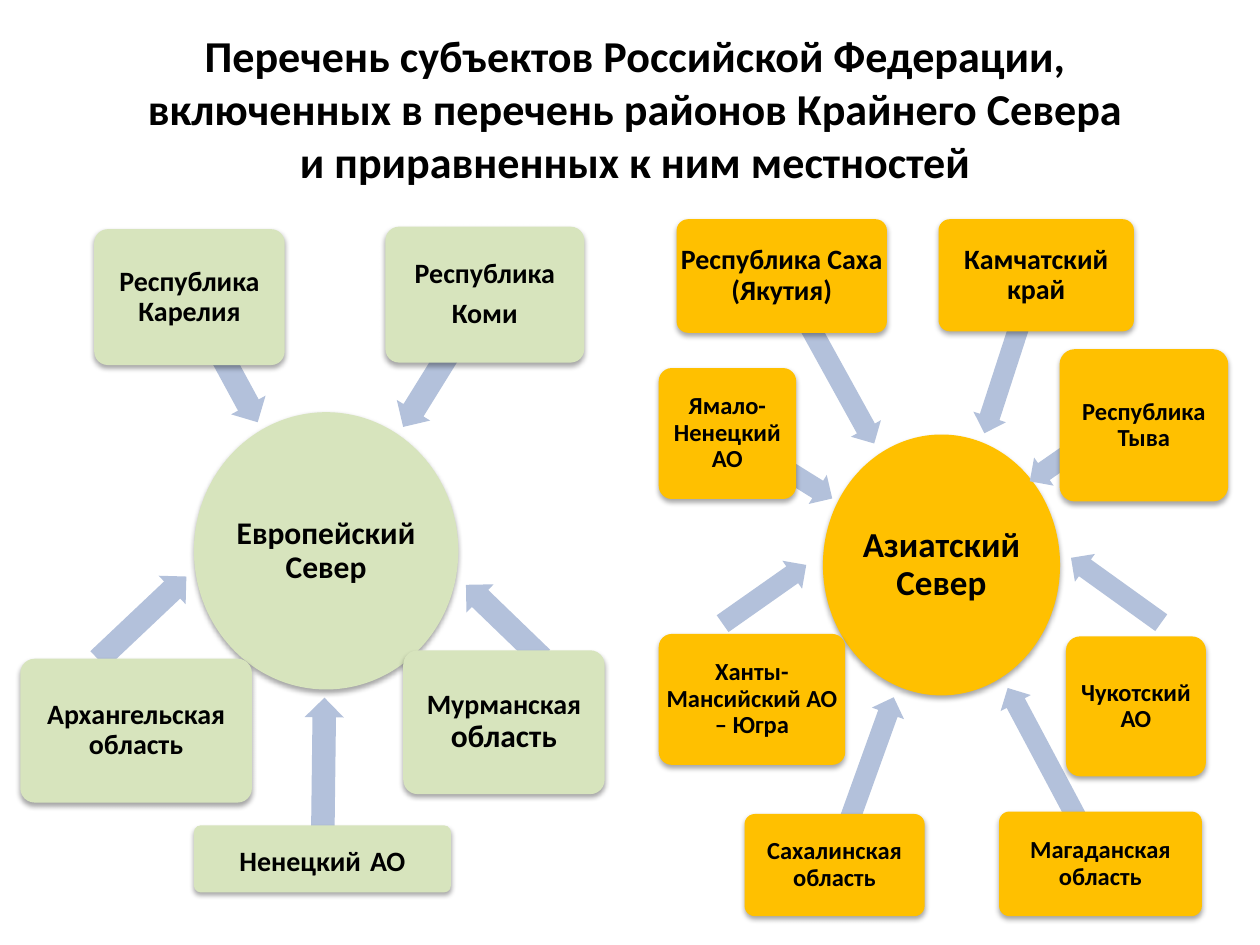
from lxml.etree import SubElement
from pptx import Presentation
from pptx.dml.color import RGBColor
from pptx.enum.shapes import MSO_SHAPE
from pptx.enum.text import MSO_ANCHOR, PP_ALIGN
from pptx.oxml.ns import qn
from pptx.util import Cm, Pt

FONT = "Calibri"
COLORS = {"text": "000000", "green": "D7E4BD", "gold": "FFC000", "arrow": "B3C1DB"}
TITLE = ("Перечень субъектов Российской Федерации,\v"
         "включенных в перечень районов Крайнего Севера\v"
         "и приравненных к ним местностей")

# Boxes: left, top, width, height. Arrows: centre x, centre y, length, angle.
# A paragraph is plain text, or a list of (text, size) where sizes differ.
HUBS = [
    {
        "color": "green", "thick": 0.79,
        "hub": (["Европейский Север"], 18, (3.91, 8.31, 5.33, 5.59)),
        "regions": [
            (["Архангельская область"], 16,
             (0.41, 13.28, 4.67, 2.9), (2.87, 12.46, 2.44, 136.6)),
            ([[("Ненецкий", 16), (" ", 23), ("АО", 16)]], 16,
             (3.91, 16.64, 5.18, 1.35), (6.52, 15.68, 3.23, 90.7)),
            (["Республика Карелия"], 16,
             (1.9, 4.62, 3.84, 2.74), (4.51, 7.25, 2.87, 241.5)),
            (["Республика", "Коми"], 16,
             (7.77, 4.57, 4.01, 2.74), (8.95, 7.28, 3.12, 301.8)),
            ([[("Мурманская ", 16), ("область", 18)]], 16,
             (8.13, 13.11, 4.06, 2.9), (10.16, 12.53, 2.13, 44)),
        ],
    },
    {
        "color": "gold", "thick": 0.69,
        "hub": (["Азиатский Север"], 20, (16.59, 8.76, 4.78, 5.26)),
        "regions": [
            (["Магаданская область"], 14,
             (20.14, 16.36, 4.09, 2.11), (21.25, 15.63, 3.99, 62)),
            (["Сахалинская область"], 14,
             (15.01, 16.41, 3.63, 2.06), (17.41, 15.74, 3.58, 109.8)),
            (["Ханты-Мансийский АО – Югра"], 14,
             (13.28, 12.78, 3.76, 2.64), (15.41, 11.98, 2.06, 144.9)),
            (["Ямало-Ненецкий АО"], 14,
             (13.28, 7.42, 2.77, 2.64), (15.72, 9.39, 2.49, 211.9)),
            (["Республика Саха (Якутия)"], 16,
             (13.64, 4.42, 4.24, 2.29), (16.69, 7.25, 3.86, 241.1)),
            (["Камчатский край"], 16,
             (18.92, 4.42, 3.94, 2.26), (20.36, 7.15, 3.33, 288)),
            (["Республика Тыва"], 14,
             (21.36, 7.04, 3.4, 3.07), (21.73, 9.03, 2.36, 325.2)),
            (["Чукотский АО"], 14,
             (21.49, 12.83, 2.82, 2.82), (22.5, 11.9, 2.24, 35.7)),
        ],
    },
]


def style(para, size):
    para.alignment = PP_ALIGN.CENTER
    font = para.font
    font.name, font.size, font.bold = FONT, Pt(size), True
    font.color.rgb = RGBColor.from_string(COLORS["text"])


def add_shape(slide, kind, box, color):
    shape = slide.shapes.add_shape(kind, *map(Cm, box))
    shape.fill.solid()
    shape.fill.fore_color.rgb = RGBColor.from_string(COLORS[color])
    shape.line.fill.background()
    shape.shadow.inherit = False
    return shape


def add_shadow(shape):
    effects = shape._element.spPr.find(qn("a:effectLst"))
    outer = SubElement(effects, qn("a:outerShdw"), blurRad=str(Pt(3.1)),
                       dist=str(Pt(1.8)), dir="5400000", rotWithShape="0")
    black = SubElement(outer, qn("a:srgbClr"), val="000000")
    SubElement(black, qn("a:alpha"), val="35000")


def add_label(shape, paras, size):
    frame = shape.text_frame
    frame.word_wrap = True
    frame.vertical_anchor = MSO_ANCHOR.MIDDLE
    frame.margin_left = frame.margin_right = 0
    frame.margin_top = frame.margin_bottom = 0
    for i, content in enumerate(paras):
        para = frame.add_paragraph() if i else frame.paragraphs[0]
        style(para, size)
        para.line_spacing = 0.9
        para.space_after = Pt(0.35 * size)
        if isinstance(content, str):
            para.add_run().text = content
            continue
        for text, points in content:
            run = para.add_run()
            run.text = text
            run.font.size = Pt(points)


def add_node(slide, kind, paras, size, box, color):
    node = add_shape(slide, kind, box, color)
    add_shadow(node)
    add_label(node, paras, size)
    return node


def add_arrow(slide, x, y, length, angle, thick):
    box = (x - length / 2, y - thick / 2, length, thick)
    arrow = add_shape(slide, MSO_SHAPE.LEFT_ARROW, box, "arrow")
    arrow.adjustments[0], arrow.adjustments[1] = 0.6, 0.5
    arrow.rotation = angle


def main():
    deck = Presentation()
    deck.slide_width, deck.slide_height = Cm(25.4), Cm(19.05)
    slide = deck.slides.add_slide(deck.slide_layouts[5])

    title = slide.shapes.title
    title.left, title.top, title.width, title.height = map(Cm, (0.79, 0.41, 24.03, 3.53))
    title.text_frame.text = TITLE
    title.text_frame.vertical_anchor = MSO_ANCHOR.MIDDLE
    style(title.text_frame.paragraphs[0], 25.2)

    for group in HUBS:
        color = group["color"]
        add_node(slide, MSO_SHAPE.OVAL, *group["hub"], color)
        for paras, size, box, arrow in group["regions"]:
            add_arrow(slide, *arrow, group["thick"])
            node = add_node(slide, MSO_SHAPE.ROUNDED_RECTANGLE, paras, size, box, color)
            node.adjustments[0] = 0.1

    deck.save("out.pptx")


if __name__ == "__main__":
    main()
